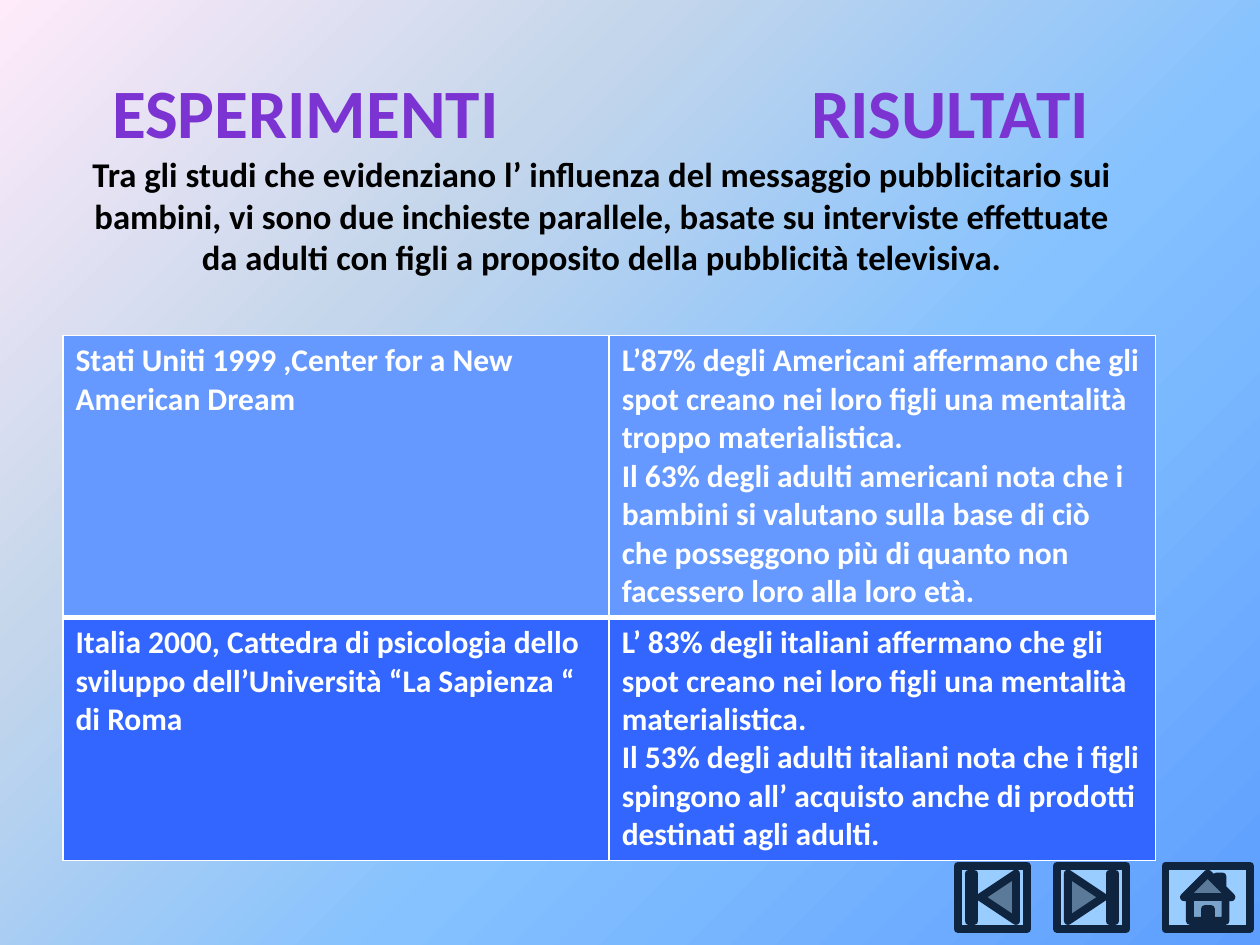
import pptx
import pptx.util
import pptx.dml.color
import pptx.enum.shapes
import pptx.enum.text
import pptx.oxml.ns
from dataclasses import dataclass
from lxml import etree

WIDE, HIGH = 10, 7.5
qn = pptx.oxml.ns.qn
Inches, Pt = pptx.util.Inches, pptx.util.Pt
SHAPE = pptx.enum.shapes.MSO_SHAPE
ALIGN = pptx.enum.text.PP_ALIGN


@dataclass(frozen=True)
class Theme:
    font: str = "Calibri"
    head: str = "7B34D2"
    ink: str = "000000"
    light: str = "FFFFFF"
    rows: tuple = ("6699FF", "3366FF")
    icon: str = "99CCFF"
    edge: str = "0F243E"
    back: tuple = ((0, "5E9EFF"), (40, "85C2FF"), (70, "C4D6EB"), (100, "FFEBFA"))
    big: float = 39.6
    mid: float = 19.8
    small: float = 18
    thick: float = 4.5


THEME = Theme()

# Boxes as left, top, width and height shares of the slide
TITLE = (0.055, 0.156, 0.845, 0.145)
TABLE = (0.05, 0.355, 0.867, 0.503)
BAR = (0.76, 0.916, 0.232, 0.067)

HEADS = ("ESPERIMENTI", "RISULTATI")
TABS = (0.24, 5.79)
INTRO = ("Tra gli studi che evidenziano l’ influenza del messaggio pubblicitario sui "
         "bambini, vi sono due inchieste parallele, basate su interviste effettuate da "
         "adulti con figli a proposito della pubblicità televisiva.")
CELLS = (
    (("Stati Uniti 1999 ,Center for a New American Dream",),
     ("L’87% degli Americani affermano che gli spot creano nei loro figli una "
      "mentalità troppo materialistica.",
      "Il 63% degli adulti americani nota che i bambini si valutano sulla base di ciò "
      "che posseggono più di quanto non facessero loro alla loro età.")),
    (("Italia 2000, Cattedra di psicologia dello sviluppo dell’Università "
      "“La Sapienza “ di Roma",),
     ("L’ 83% degli italiani affermano che gli spot creano nei loro figli una "
      "mentalità materialistica.",
      "Il 53% degli adulti italiani nota che i figli spingono all’ acquisto anche di "
      "prodotti destinati agli adulti.")),
)
ROWS = (2.02, 1.75)

# Buttons: shape, left share and width share of the bar
ICONS = (
    (SHAPE.ACTION_BUTTON_BEGINNING, 0, 0.237),
    (SHAPE.ACTION_BUTTON_END, 0.34, 0.237),
    (SHAPE.ACTION_BUTTON_HOME, 0.711, 0.289),
)


def color(code):
    return pptx.dml.color.RGBColor.from_string(code)


def place(box):
    x, y, w, h = box
    return Inches(x * WIDE), Inches(y * HIGH), Inches(w * WIDE), Inches(h * HIGH)


def style(para, size, code):
    para.font.name = THEME.font
    para.font.size = Pt(size)
    para.font.bold = True
    para.font.color.rgb = color(code)


def add_back(slide):
    fill = slide.background.fill
    fill.gradient()
    fill.gradient_angle = 135
    stops = slide.element.find(".//" + qn("a:gsLst"))
    stops.clear()
    for pos, code in THEME.back:
        stop = etree.SubElement(stops, qn("a:gs"), pos=str(pos * 1000))
        etree.SubElement(stop, qn("a:srgbClr"), val=code)


def add_title(slide, box):
    title = slide.shapes.title
    title.left, title.top, title.width, title.height = place(box)
    frame = title.text_frame
    frame.word_wrap = True
    frame.auto_size = pptx.enum.text.MSO_AUTO_SIZE.NONE
    frame.vertical_anchor = pptx.enum.text.MSO_ANCHOR.MIDDLE
    frame.margin_bottom = Inches(0.72)  # lifts the text above the table

    # Two column heads on tab stops
    head = frame.paragraphs[0]
    head.text = "".join("\t" + word for word in HEADS)
    head.alignment = ALIGN.LEFT
    style(head, THEME.big, THEME.head)
    tabs = etree.Element(qn("a:tabLst"))
    for pos in TABS:
        etree.SubElement(tabs, qn("a:tab"), pos=str(Inches(pos)), algn="l")
    head.font  # the tab list goes before the font defaults
    head._p.pPr.insert(0, tabs)

    # Introduction
    intro = frame.add_paragraph()
    intro.text = INTRO
    intro.alignment = ALIGN.CENTER
    style(intro, THEME.mid, THEME.ink)


def add_edges(cell, widths):
    props = cell._tc.get_or_add_tcPr()
    for spot, (side, width) in enumerate(widths.items()):
        line = etree.Element(qn("a:ln" + side), w=str(Pt(width)))
        fill = etree.SubElement(line, qn("a:solidFill"))
        etree.SubElement(fill, qn("a:srgbClr"), val=THEME.light)
        props.insert(spot, line)


def add_table(slide, box):
    grid = slide.shapes.add_table(len(CELLS), len(CELLS[0]), *place(box)).table
    grid.first_row = grid.horz_banding = False
    for r, row in enumerate(CELLS):
        grid.rows[r].height = Inches(ROWS[r])
        for c, lines in enumerate(row):
            cell = grid.cell(r, c)
            cell.fill.solid()
            cell.fill.fore_color.rgb = color(THEME.rows[r])
            cell.text = "\n".join(lines)
            for para in cell.text_frame.paragraphs:
                style(para, THEME.small, THEME.light)
            # The rule between the rows is thicker
            add_edges(cell, {"L": 1, "R": 1, "T": 3 if r else 1, "B": 1 if r else 3})


def add_bar(slide, box):
    x, y, w, h = box
    for kind, left, width in ICONS:
        icon = slide.shapes.add_shape(kind, *place((x + left * w, y, width * w, h)))
        icon.shadow.inherit = False
        icon.fill.solid()
        icon.fill.fore_color.rgb = color(THEME.icon)
        icon.line.color.rgb = color(THEME.edge)
        icon.line.width = Pt(THEME.thick)


def main():
    deck = pptx.Presentation()
    deck.slide_width, deck.slide_height = Inches(WIDE), Inches(HIGH)
    slide = deck.slides.add_slide(deck.slide_layouts[5])
    add_back(slide)
    add_title(slide, TITLE)
    add_table(slide, TABLE)
    add_bar(slide, BAR)
    deck.save("out.pptx")


if __name__ == "__main__":
    main()
